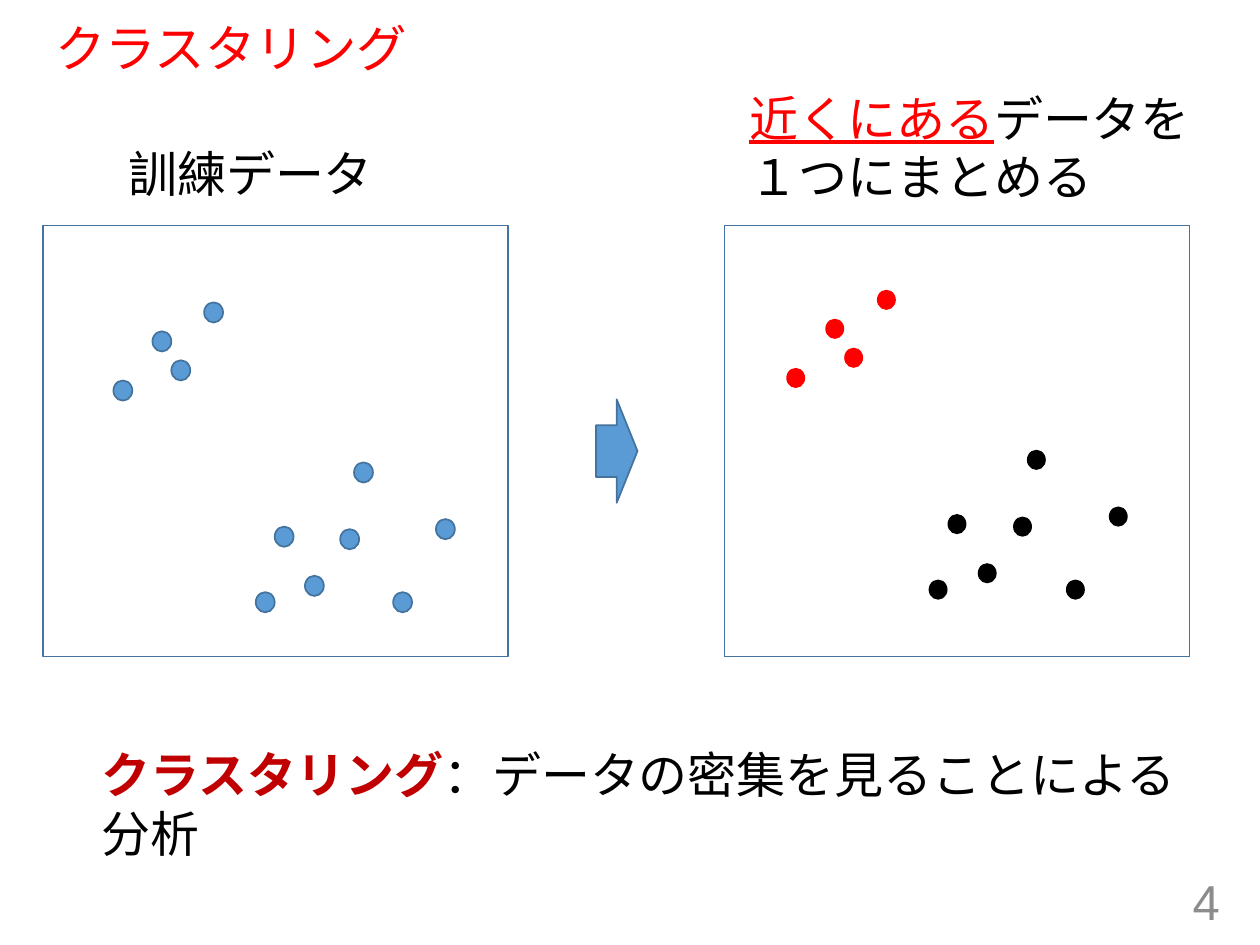
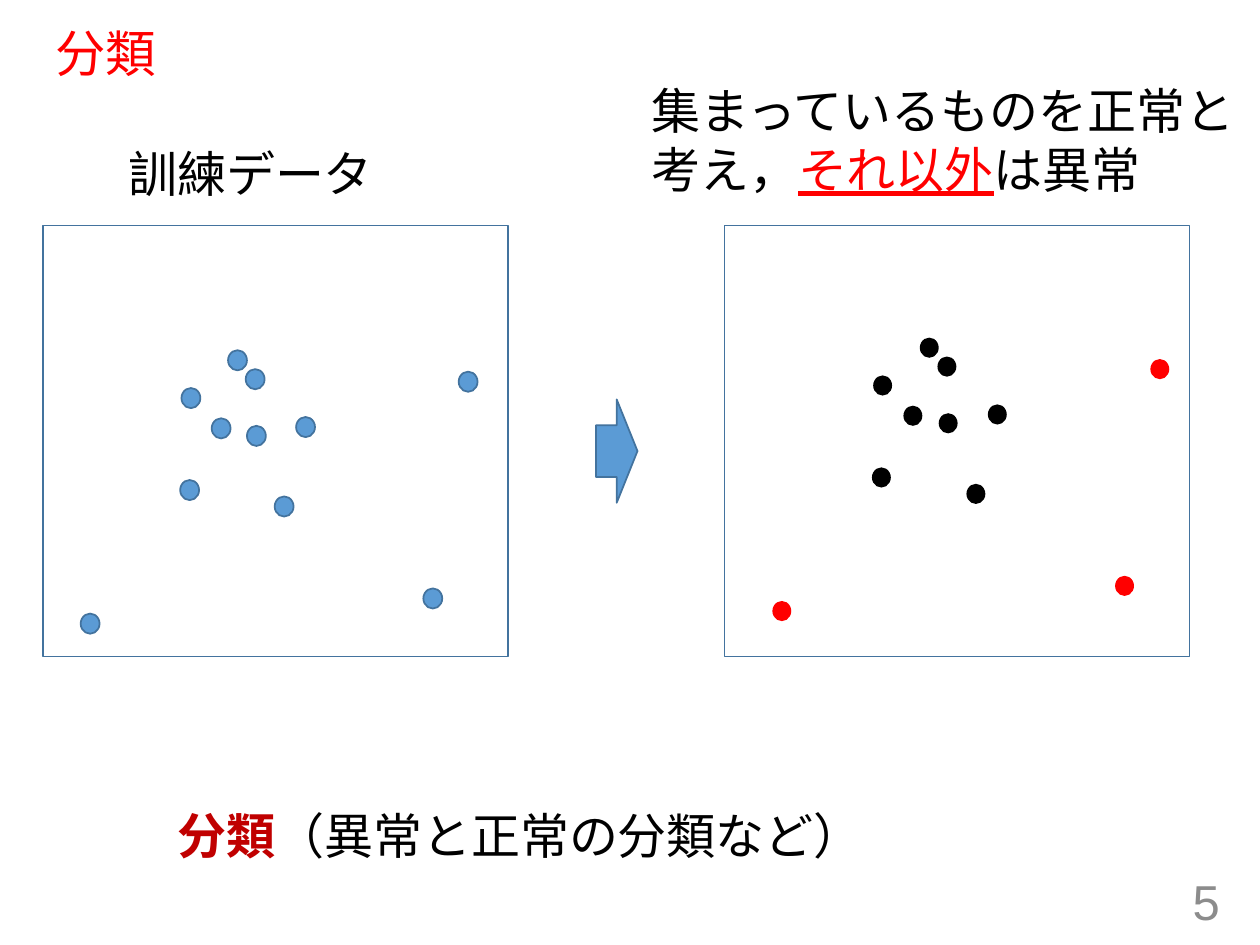
from dataclasses import dataclass

from lxml import etree
from pptx import Presentation
from pptx.dml.color import RGBColor
from pptx.enum import shapes, text
from pptx.oxml.ns import qn
from pptx.util import Inches, Pt


@dataclass(frozen=True)
class Theme:
    red: str = "FF0000"
    crimson: str = "C00000"
    black: str = "000000"
    gray: str = "8C8C8C"
    blue: str = "5B9BD5"
    edge: str = "43739E"
    head: str = "Arial"
    body: str = "Calibri"
    strong: str = "Noto Sans CJK JP"
    title: float = 28.8
    size: float = 28
    line: float = 1


T = Theme()
KIND = shapes.MSO_SHAPE
FRAME_X = (0.34, 5.75)
FRAME_Y, FRAME_W, FRAME_H = 1.79, 3.69, 3.42
DOT_W, DOT_H = 0.15, 0.16

# Each text piece pairs its words with one of these looks.
PLAIN, MARK, KEY = "plain", "mark", "key"
LOOKS = {
    PLAIN: dict(color=T.black),
    MARK: dict(color=T.red, under=True),
    KEY: dict(color=T.crimson, bold=True, face=T.strong),
}


def style(run, color, face=T.body, size=T.size, bold=False, under=False):
    font = run.font
    font.name, font.size = face, Pt(size)
    font.bold, font.underline = bold, under
    font.color.rgb = RGBColor.from_string(color)
    # East Asian glyphs keep the line height of the Latin text face.
    asian = etree.SubElement(font._element, qn("a:ea"))
    asian.set("typeface", T.body if face == T.strong else face)


def add_box(slide, at, inset=0.1):
    frame = slide.shapes.add_textbox(*map(Inches, at)).text_frame
    frame.word_wrap = True
    frame.margin_left = Inches(inset)
    return frame


def add_label(slide, words, at, color=T.black, size=T.size):
    """Add a one-line text in the heading face and return its frame."""
    frame = add_box(slide, at)
    frame.text = words
    style(frame.paragraphs[0].runs[0], color, T.head, size)
    return frame


def add_note(slide, lines, at, inset=0.1):
    """Add lines of text, each a list of (words, look) pieces."""
    frame = add_box(slide, at, inset)
    for i, line in enumerate(lines):
        para = frame.add_paragraph() if i else frame.paragraphs[0]
        for words, look in line:
            run = para.add_run()
            run.text = words
            style(run, **LOOKS[look])


def add_form(slide, kind, at, fill=None, edge=None):
    form = slide.shapes.add_shape(kind, *map(Inches, at))
    form.shadow.inherit = False
    if fill:
        form.fill.solid()
        form.fill.fore_color.rgb = RGBColor.from_string(fill)
    else:
        form.fill.background()
    if edge:
        form.line.color.rgb = RGBColor.from_string(edge)
        form.line.width = Pt(T.line)
    else:
        form.line.fill.background()


def add_dots(slide, spots, fill, edge=None, shift=(0, 0)):
    for x, y in spots:
        at = (x + shift[0], y + shift[1], DOT_W, DOT_H)
        add_form(slide, KIND.OVAL, at, fill, edge)


def add_page(deck, number, title, top):
    """Add a slide with the title, heading, frames, arrow and page number."""
    slide = deck.slides.add_slide(deck.slide_layouts[6])
    head = add_label(slide, title, (0.34, top, 9.25, 0.51), T.red, T.title)
    head.vertical_anchor = text.MSO_ANCHOR.MIDDLE
    head.paragraphs[0].line_spacing = 0.9
    add_label(slide, "訓練データ", (0.92, 1.09, 3, 0.81))
    foot = add_label(slide, str(number), (7.53, 6.95, 2.25, 0.4), T.gray)
    foot.vertical_anchor = text.MSO_ANCHOR.MIDDLE
    foot.paragraphs[0].alignment = text.PP_ALIGN.RIGHT
    for x in FRAME_X:
        at = (x, FRAME_Y, FRAME_W, FRAME_H)
        add_form(slide, KIND.RECTANGLE, at, edge=T.edge)
    arrow = (4.73, 3.17, 0.33, 0.82)
    add_form(slide, KIND.RIGHT_ARROW, arrow, T.blue, T.edge)
    return slide


def add_groups(slide, red, black, shift):
    """Plot all data at left, and again at right coloured by group."""
    add_dots(slide, red + black, T.blue, T.edge)
    add_dots(slide, red, T.red, shift=shift)
    add_dots(slide, black, T.black, shift=shift)


def add_cluster(deck):
    slide = add_page(deck, 4, "クラスタリング", 0.15)
    upper = [(1.21, 2.63), (1.36, 2.86), (0.9, 3.02), (1.62, 2.4)]
    lower = [(2.7, 4.2), (2.42, 4.57), (2.18, 4.18), (2.81, 3.67),
             (3.46, 4.12), (3.12, 4.7), (2.03, 4.7)]
    add_groups(slide, upper, lower, (5.34, -0.1))
    add_note(slide, [[("近くにある", MARK), ("データを", PLAIN)],
                     [("１つにまとめる", PLAIN)]], (5.85, 0.65, 3.74, 1.04))
    add_note(slide, [[("クラスタリング", KEY),
                      ("：データの密集を見ることによる分析", PLAIN)]],
             (0.71, 5.86, 8.9, 1.04))


def add_class(deck):
    slide = add_page(deck, 5, "分類", 0.19)
    odd = [(0.64, 4.87), (3.64, 2.95), (3.36, 4.67)]
    usual = [(1.44, 3.08), (1.68, 3.32), (1.95, 2.93), (1.81, 2.78),
             (2.18, 3.94), (2.35, 3.31), (1.96, 3.38), (1.43, 3.81)]
    add_groups(slide, odd, usual, (5.49, -0.1))
    add_note(slide, [[("集まっているものを正常と", PLAIN)],
                     [("考え，", PLAIN), ("それ以外", MARK), ("は異常", PLAIN)]],
             (5.07, 0.59, 4.89, 1.51))
    add_note(slide, [[("分類", KEY), ("（異常と正常の分類など）", PLAIN)]],
             (0.92, 6.34, 8.9, 1.04), inset=0.49)


def main():
    deck = Presentation()
    deck.slide_width, deck.slide_height = Inches(10), Inches(7.5)
    add_cluster(deck)
    add_class(deck)
    deck.save("out.pptx")


if __name__ == "__main__":
    main()
